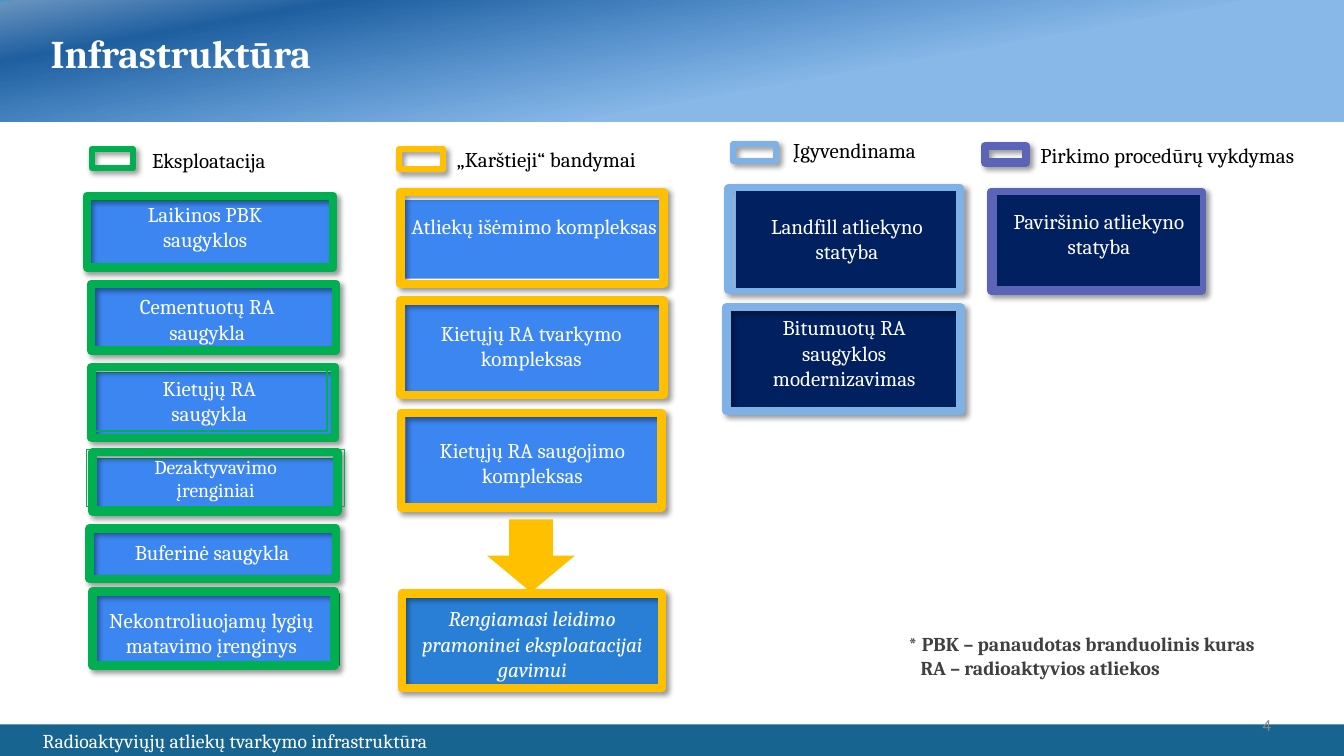
from lxml.etree import SubElement
from pptx import Presentation
from pptx.dml.color import RGBColor
from pptx.enum.shapes import MSO_SHAPE
from pptx.enum.text import MSO_ANCHOR, PP_ALIGN
from pptx.oxml import parse_xml
from pptx.oxml.ns import nsdecls, qn
from pptx.util import Pt

WHITE = RGBColor(0xFF, 0xFF, 0xFF)
BLACK = RGBColor(0x00, 0x00, 0x00)
GREEN = RGBColor(0x00, 0xB0, 0x50)
GOLD = RGBColor(0xFF, 0xC0, 0x00)
SKY = RGBColor(0x7E, 0xB2, 0xE6)
VIOLET = RGBColor(0x5C, 0x64, 0xB7)
BLUE = RGBColor(0x3C, 0x86, 0xF2)
AZURE = RGBColor(0x29, 0x7F, 0xD5)
NAVY = RGBColor(0x00, 0x20, 0x60)
TEAL = RGBColor(0x17, 0x64, 0x90)
GREY = RGBColor(0x88, 0x88, 0x88)
DARK = RGBColor(0x40, 0x40, 0x40)

SHADOW = (f'<a:effectLst {nsdecls("a")}>'
          '<a:outerShdw blurRad="50800" dist="38100" dir="2700000" '
          'algn="tl" rotWithShape="0"><a:srgbClr val="000000">'
          '<a:alpha val="40000"/></a:srgbClr></a:outerShdw></a:effectLst>')

# Position (%), colour and opacity (%) of the header's stops
STOPS = [(38, "2F83D7", 57), (83, "1F5FA0", 100),
         (99, "1F5FA0", 67), (100, "1EB4DD", 100)]

# Swatch box, line width, label corner, label, colour
LEGEND = [
    ((65.5, 106.5, 29.5, 13.5), 4.5, (105, 105), "Eksploatacija", GREEN),
    ((285, 106.5, 31.5, 14.5), 4.5, (323, 104.5),
     "„Karštieji“ bandymai", GOLD),
    ((523.5, 103, 31, 12), 4.5, (563, 98.5), "Įgyvendinama", SKY),
    ((703.5, 104.5, 29.5, 11.5), 6, (739.5, 102),
     "Pirkimo procedūrų vykdymas", VIOLET),
]

# Fill box, frame box, text box, words
RUNNING = [
    ((62, 143, 176, 50), (62, 140, 176, 51), (58, 140, 177, 44),
     "Laikinos PBK\nsaugyklos"),
    ((65, 202, 174, 46), (65, 203, 175, 47.5), (63, 206, 170, 44),
     "Cementuotų RA\nsaugykla"),
    ((67, 266, 174, 45), (65.5, 262, 174, 51), (65.5, 264, 168, 44),
     "Kietųjų RA\nsaugykla"),
    ((66, 327.5, 174, 38), (66, 323, 175, 42.5), (62, 321, 184, 41),
     "Dezaktyvavimo\nįrenginiai"),
    ((66, 379.5, 174, 32), (64, 377.5, 176, 36), (71, 382, 161, 25),
     "Buferinė saugykla"),
    ((67.5, 424, 175, 51), (66, 422.5, 173, 53), (62.5, 430, 177, 44),
     "Nekontroliuojamų lygių matavimo įrenginys"),
]
TESTING = [
    ((288, 143, 184.5, 56), (286, 137, 188, 66), (288.5, 149, 186, 25),
     "Atliekų išėmimo kompleksas"),
    ((288, 212.5, 185, 70.5), (286, 214.5, 188, 67.5), (287, 229, 185, 36),
     "Kietųjų RA tvarkymo kompleksas"),
    ((289.5, 296.5, 181.5, 67.5), (286.5, 295, 186, 67.5),
     (289.5, 296.5, 181.5, 67.5), "Kietųjų RA saugojimo kompleksas"),
]
PERMIT = ((289.5, 426, 181.5, 67.5), (287, 424, 186, 67.5),
          (289.5, 426, 181.5, 67.5),
          "Rengiamasi leidimo pramoninei eksploatacijai gavimui")
LANDFILL = ((525, 136, 158.5, 70.5), (520.5, 134.5, 165.5, 72.5),
            (526, 148.5, 158, 44), "Landfill atliekyno statyba")
BITUMEN = ((520.5, 219, 165.5, 74), (519, 219.5, 167, 74),
           (531.5, 221, 143, 62), "Bitumuotų RA saugyklos modernizavimas")
SURFACE = ((711.5, 139, 146, 66), (708, 137, 150.5, 70.5),
           (720, 145, 130, 44), "Paviršinio atliekyno statyba")


def block(slide, box, fill=None, line=None, width=1, kind=MSO_SHAPE.RECTANGLE):
    shape = slide.shapes.add_shape(kind, *map(Pt, box))
    shape.shadow.inherit = False
    if fill is None:
        shape.fill.background()
    else:
        shape.fill.solid()
        shape.fill.fore_color.rgb = fill
    if line is None:
        shape.line.fill.background()
    else:
        shape.line.color.rgb = line
        shape.line.width = Pt(width)
    return shape


def frame(slide, box, color, width=6):
    """Draw an unfilled, round-joined outline that casts a shadow."""
    shape = block(slide, box, line=color, width=width)
    props = shape.element.spPr
    SubElement(props.find(qn("a:ln")), qn("a:round"))
    props.replace(props.find(qn("a:effectLst")), parse_xml(SHADOW))


def write(shape, words, size=15, color=WHITE, align=PP_ALIGN.LEFT,
          anchor=MSO_ANCHOR.MIDDLE, inset=3.6, face="Cambria",
          bold=False, slant=False, space=None):
    text = shape.text_frame
    text.text = words
    text.word_wrap = True
    text.vertical_anchor = anchor
    text.margin_left = text.margin_right = Pt(inset)
    text.margin_top = text.margin_bottom = Pt(3.6)
    for para in text.paragraphs:
        para.alignment = align
        para.line_spacing = space
        for run in para.runs:
            font = run.font
            font.name, font.size = face, Pt(size)
            font.bold, font.italic = bold, slant
            font.color.rgb = color
    return text


def label(slide, box, words, **style):
    shape = slide.shapes.add_textbox(*map(Pt, box))
    return write(shape, words, **style)


def card(slide, item, fill, color, edge=None, over=False, **style):
    """Draw a framed box; over puts the fill above the frame."""
    inner, outer, area, words = item
    if over:
        frame(slide, outer, color)
    block(slide, inner, fill, edge)
    if not over:
        frame(slide, outer, color)
    label(slide, area, words, align=PP_ALIGN.CENTER, **style)


def header(slide):
    title = slide.shapes.title
    title.left, title.top, title.width, title.height = map(
        Pt, (32.5, 20, 828, 39))
    write(title, "Infrastruktūra", size=28, bold=True, space=0.9)
    band = block(slide, (0, 0, 960, 86.5), WHITE)
    stops = "".join(
        f'<a:gs pos="{pos * 1000}"><a:srgbClr val="{color}">'
        f'<a:alpha val="{alpha * 1000}"/></a:srgbClr></a:gs>'
        for pos, color, alpha in STOPS)
    props = band.element.spPr
    props.replace(props.find(qn("a:solidFill")), parse_xml(
        f'<a:gradFill {nsdecls("a")} rotWithShape="1"><a:gsLst>{stops}'
        '</a:gsLst><a:lin ang="15600000" scaled="0"/></a:gradFill>'))
    title.element.addprevious(band.element)


def footer(slide):
    band = block(slide, (0, 517.5, 960, 22.5), TEAL)
    write(band, "Radioaktyviųjų atliekų tvarkymo infrastruktūra",
          size=14, inset=30.5)
    label(slide, (892, 505.5, 19.5, 24.5), "4", size=12, color=GREY,
          align=PP_ALIGN.RIGHT, face="Calibri")
    note = label(slide, (642, 448, 280, 63),
                 "* PBK – panaudotas branduolinis kuras\n"
                 "RA – radioaktyvios atliekos", size=14, color=DARK,
                 anchor=MSO_ANCHOR.TOP, inset=7.2, bold=True)
    props = note.paragraphs[1]._p.get_or_add_pPr()
    props.set("marL", str(Pt(8.5)))


def main():
    prs = Presentation()
    prs.slide_width, prs.slide_height = Pt(960), Pt(540)
    slide = prs.slides.add_slide(prs.slide_layouts[5])
    header(slide)
    for box, width, corner, words, color in LEGEND:
        frame(slide, box, color, width)
        label(slide, (*corner, 207, 22), words, color=BLACK,
              anchor=MSO_ANCHOR.TOP, space=0.8)
    for item in RUNNING:
        small = item[3].startswith("Dez")
        card(slide, item, BLUE, GREEN, edge=GREEN, size=14 if small else 15)
    for _, _, area, _ in RUNNING[2:4]:
        block(slide, area, line=GREEN)
    for item in TESTING:
        card(slide, item, BLUE, GOLD)
    block(slide, (348, 371, 62.5, 52), GOLD, kind=MSO_SHAPE.DOWN_ARROW)
    card(slide, PERMIT, AZURE, GOLD, slant=True)
    card(slide, LANDFILL, NAVY, SKY, edge=SKY, over=True)
    card(slide, BITUMEN, NAVY, SKY, edge=SKY)
    card(slide, SURFACE, NAVY, VIOLET, edge=VIOLET, over=True)
    footer(slide)
    prs.save("out.pptx")


if __name__ == "__main__":
    main()
